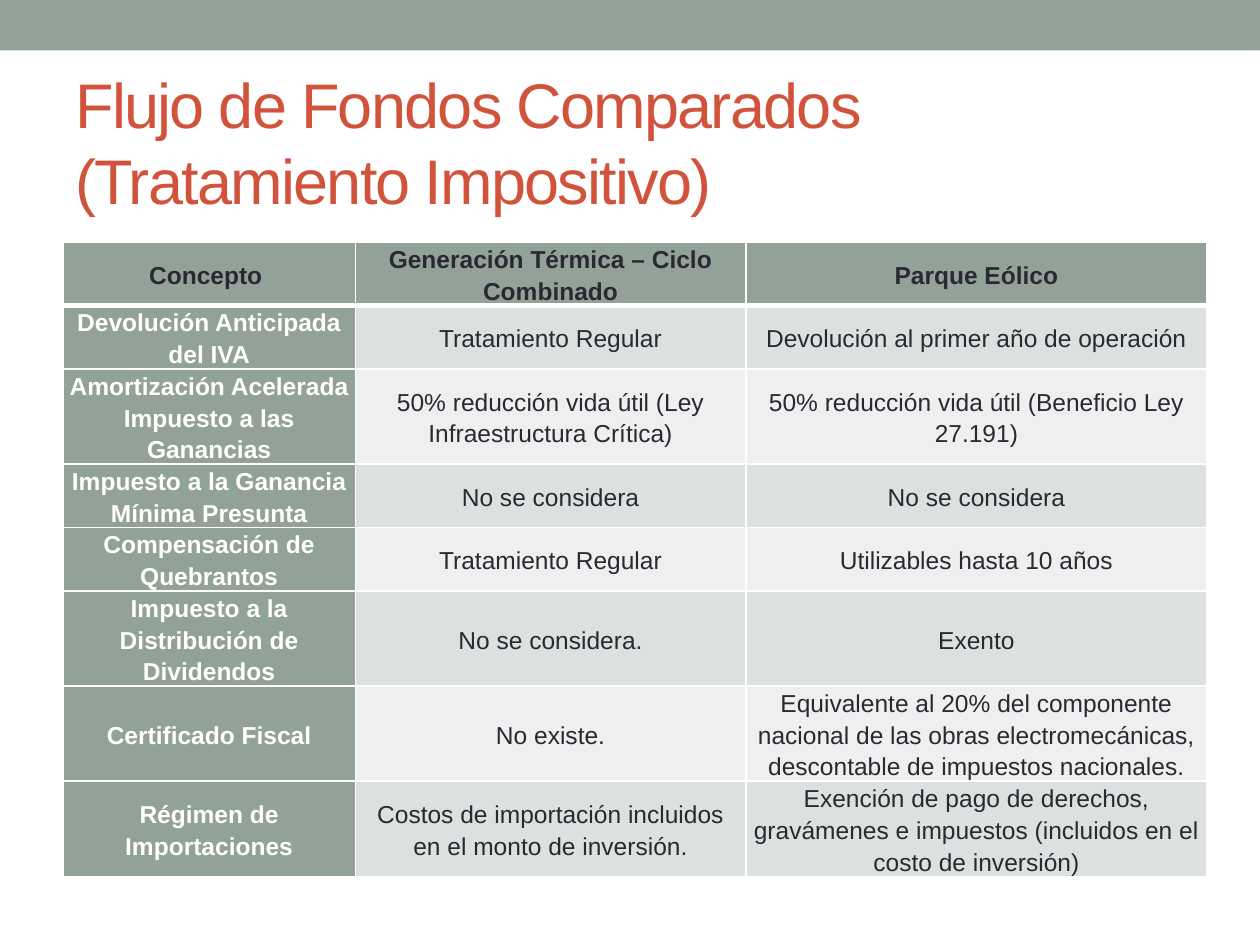
from dataclasses import dataclass

from lxml.etree import SubElement
from pptx import Presentation
from pptx.dml.color import RGBColor
from pptx.enum.shapes import MSO_SHAPE as Shape
from pptx.enum.text import MSO_ANCHOR as Anchor, PP_ALIGN as Align
from pptx.oxml.ns import qn
from pptx.util import Inches, Pt


@dataclass(frozen=True)
class Theme:
    font: str = "Arial"
    sage: str = "93A299"
    rust: str = "D2533C"
    ink: str = "292934"
    white: str = "FFFFFF"
    bands: tuple = ("DCE0DE", "EEF0EF")
    title_size: int = 36
    table_size: int = 14
    table_leading: float = 18.1


theme = Theme()


def style_text(para, size, color, bold=False):
    for span in para.runs:
        span.font.name = theme.font
        span.font.size = Pt(size)
        span.font.bold = bold
        span.font.color.rgb = RGBColor.from_string(color)


def add_border(cell, side, width):
    line = SubElement(cell._tc.get_or_add_tcPr(), qn(f"a:ln{side}"), w=str(Pt(width)))
    fill = SubElement(line, qn("a:solidFill"))
    SubElement(fill, qn("a:srgbClr"), val=theme.white)


deck = Presentation()
deck.slide_width, deck.slide_height = Inches(10), Inches(7.5)
page = deck.slides.add_slide(deck.slide_layouts[6])

band = page.shapes.add_shape(Shape.RECTANGLE, 0, 0, deck.slide_width, Inches(0.4))
band.shadow.inherit = False
band.fill.solid()
band.fill.fore_color.rgb = RGBColor.from_string(theme.sage)
band.line.fill.background()

title = page.shapes.add_textbox(Inches(0.5), Inches(0.58), Inches(9), Inches(1.08))
title.text_frame.word_wrap = True
title.text_frame.vertical_anchor = Anchor.MIDDLE
title.text_frame.text = "Flujo de Fondos Comparados (Tratamiento Impositivo)"
heading = title.text_frame.paragraphs[0]
style_text(heading, theme.title_size, theme.rust)
heading.runs[0].font._element.set("spc", "-100")

rows = [
    ("Concepto ", "Generación Térmica – Ciclo Combinado", "Parque Eólico"),
    ("Devolución Anticipada del IVA", "Tratamiento Regular",
     "Devolución al primer año de operación"),
    ("Amortización Acelerada Impuesto a las Ganancias",
     "50% reducción vida útil (Ley Infraestructura Crítica)",
     "50% reducción vida útil (Beneficio Ley 27.191)"),
    ("Impuesto a la Ganancia Mínima Presunta", "No se considera", "No se considera"),
    ("Compensación de Quebrantos", "Tratamiento Regular", "Utilizables hasta 10 años"),
    ("Impuesto a la Distribución de Dividendos", "No se considera.", "Exento"),
    ("Certificado Fiscal", "No existe.",
     "Equivalente al 20% del componente nacional de las obras electromecánicas, "
     "descontable de impuestos nacionales."),
    ("Régimen de Importaciones",
     "Costos de importación incluidos en el monto de inversión.",
     "Exención de pago de derechos, gravámenes e impuestos "
     "(incluidos en el costo de inversión)"),
]
column_widths = (2.32, 3.1, 3.66)
line_counts = (2, 2, 3, 2, 2, 3, 3, 3)
line_height = Pt(theme.table_leading)

table = page.shapes.add_table(
    len(rows), len(column_widths), Inches(0.5), Inches(1.92),
    Inches(sum(column_widths)), line_height * sum(line_counts),
).table
for column, width in zip(table.columns, column_widths):
    column.width = Inches(width)

for row_index, (texts, line_count) in enumerate(zip(rows, line_counts)):
    table.rows[row_index].height = line_height * line_count
    is_header = row_index == 0
    for column_index, text in enumerate(texts):
        is_concept = column_index == 0
        cell = table.cell(row_index, column_index)
        cell.vertical_anchor = Anchor.MIDDLE
        cell.margin_left = cell.margin_right = Inches(0.05)
        cell.margin_top = cell.margin_bottom = 0

        add_border(cell, "L", 1)
        add_border(cell, "R", 1)
        add_border(cell, "T", 3 if row_index == 1 else 1)
        add_border(cell, "B", 3 if is_header else 1)

        shade = theme.sage if is_header or is_concept else theme.bands[(row_index - 1) % 2]
        cell.fill.solid()
        cell.fill.fore_color.rgb = RGBColor.from_string(shade)

        cell.text_frame.text = text
        para = cell.text_frame.paragraphs[0]
        para.alignment = Align.CENTER
        para.line_spacing = line_height
        color = theme.white if is_concept and not is_header else theme.ink
        style_text(para, theme.table_size, color, is_header or is_concept)

deck.save("out.pptx")
